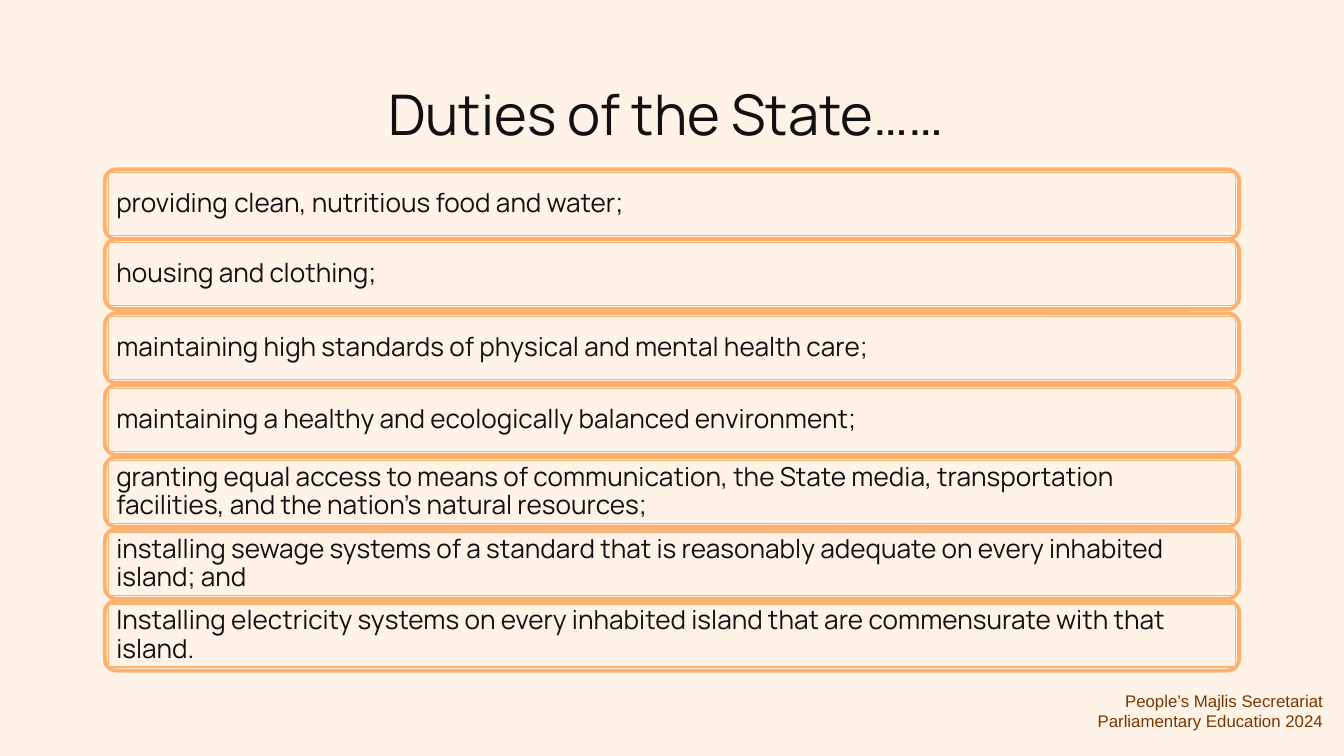
from pptx import Presentation
from pptx.dml.color import RGBColor
from pptx.enum import shapes, text
from pptx.util import Inches, Pt

COLORS = {"cream": "FFF2E7", "orange": "FFB06D", "ink": "121010", "brown": "793700"}

DUTIES = [
    ["providing", " ", "clean, nutritious food and water;"],
    ["housing and clothing;"],
    ["maintaining high standards of physical and mental health care;"],
    ["maintaining a healthy and ecologically balanced environment;"],
    ["granting equal access to means of communication, the State media, "
     "transportation facilities, and the nation's natural resources;"],
    ["installing sewage systems of a standard that is reasonably adequate "
     "on every inhabited island; and"],
    ["Installing electricity systems on every inhabited island that are "
     "commensurate with that island."],
]


class Deck:
    font = "Manrope"

    def __init__(self, width):
        self.prs = Presentation()
        self.prs.slide_width = Inches(width)
        self.prs.slide_height = Inches(width * 9 / 16)
        self.s = self.prs.slides.add_slide(self.prs.slide_layouts[5])
        bg = self.s.background.fill
        bg.solid()
        bg.fore_color.rgb = self.color("cream")

    def color(self, name):
        return RGBColor.from_string(COLORS[name])

    def frame(self, sp, anchor, inset_x, inset_y):
        tf = sp.text_frame
        tf.word_wrap = True
        tf.auto_size = text.MSO_AUTO_SIZE.NONE
        tf.vertical_anchor = anchor
        tf.margin_left = tf.margin_right = Inches(inset_x)
        tf.margin_top = tf.margin_bottom = Inches(inset_y)
        return tf

    def run(self, p, words, size, color="ink", font=None):
        r = p.add_run()
        r.text = words
        r.font.size = Pt(size)
        r.font.name = font or self.font
        r.font.color.rgb = self.color(color)

    def title(self, words, x, y, w, h):
        sp = self.s.shapes.title
        sp.left, sp.top, sp.width, sp.height = map(Inches, (x, y, w, h))
        p = self.frame(sp, text.MSO_ANCHOR.TOP, 0.1, 0.1).paragraphs[0]
        p.alignment = text.PP_ALIGN.CENTER
        self.run(p, words, 30)

    def box(self, kind, x, y, w, h, line, fill=None):
        sp = self.s.shapes.add_shape(kind, *map(Inches, (x, y, w, h)))
        sp.shadow.inherit = False
        if fill:
            sp.fill.solid()
            sp.fill.fore_color.rgb = self.color(fill)
        else:
            sp.fill.background()
        sp.line.color.rgb = self.color("orange")
        sp.line.width = Pt(line)
        return sp

    def duty(self, runs, x, y, w, h):
        # Rounded outer frame with a thin inner frame for the text
        kinds = shapes.MSO_SHAPE
        outer = self.box(kinds.ROUNDED_RECTANGLE, x, y, w, h, 2, "cream")
        outer.adjustments[0] = 0.167
        gap = 0.025
        inner = self.box(kinds.RECTANGLE, x + gap, y + gap, w - 2 * gap, h - 2 * gap, 0.75)
        p = self.frame(inner, text.MSO_ANCHOR.MIDDLE, 0.06, 0.06).paragraphs[0]
        p.alignment = text.PP_ALIGN.LEFT
        p.line_spacing = 0.9
        for words in runs:
            if words == " ":
                self.run(p, words, 12, "cream", "Arial")
            else:
                self.run(p, words, 14)

    def footer(self, lines, x, y, w, h):
        sp = self.s.shapes.add_textbox(*map(Inches, (x, y, w, h)))
        tf = self.frame(sp, text.MSO_ANCHOR.TOP, 0.1, 0.05)
        for i, words in enumerate(lines):
            p = tf.add_paragraph() if i else tf.paragraphs[0]
            p.alignment = text.PP_ALIGN.RIGHT
            self.run(p, words, 9, "brown", "Arial")


def main():
    deck = Deck(10)

    # Heading
    deck.title("Duties of the State…… ", 0.78, 0.49, 8.44, 0.63)

    # Stack of duties; the second sits tight against the first
    top, pitch, height = 1.26, 0.535, 0.52
    for i, runs in enumerate(DUTIES):
        y = top + height if i == 1 else top + i * pitch
        deck.duty(runs, 0.78, y, 8.44, height)

    # Issuing office
    deck.footer(["People’s Majlis Secretariat", "Parliamentary Education 2024"],
                6.92, 5.09, 3.02, 0.4)

    deck.prs.save("out.pptx")


if __name__ == "__main__":
    main()
